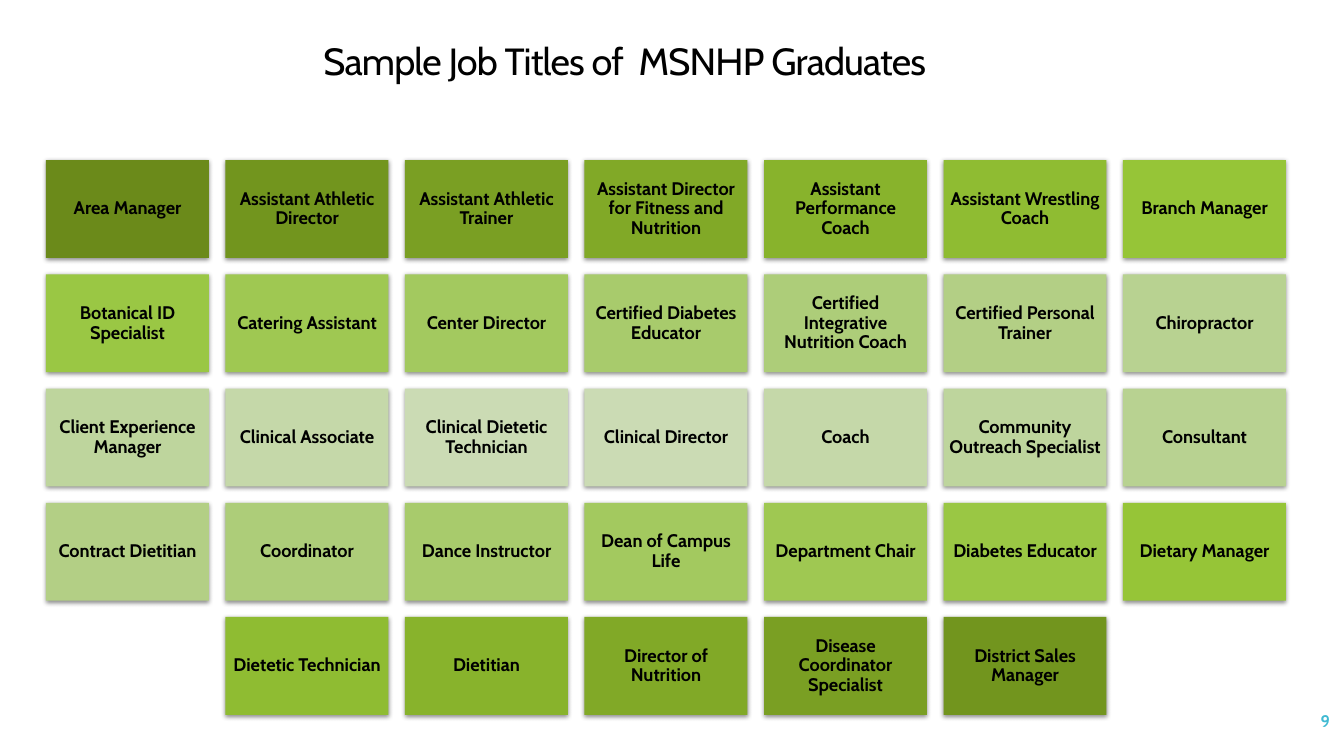
from lxml import etree
from pptx import Presentation
from pptx.dml.color import RGBColor
from pptx.enum.shapes import MSO_SHAPE
from pptx.enum.text import MSO_ANCHOR, PP_ALIGN
from pptx.oxml.ns import qn
from pptx.util import Pt

TITLE = "Sample Job Titles of  MSNHP Graduates"
PAGE_NUMBER = "9"
JOB_ROWS = [
    ["Area Manager", "Assistant Athletic Director", "Assistant Athletic Trainer",
     "Assistant Director for Fitness and Nutrition", "Assistant Performance Coach",
     "Assistant Wrestling Coach", "Branch Manager"],
    ["Botanical ID Specialist", "Catering Assistant", "Center Director",
     "Certified Diabetes Educator", "Certified Integrative Nutrition Coach",
     "Certified Personal Trainer", "Chiropractor"],
    ["Client Experience Manager", "Clinical Associate", "Clinical Dietetic Technician",
     "Clinical Director", "Coach", "Community Outreach Specialist", "Consultant"],
    ["Contract Dietitian", "Coordinator", "Dance Instructor", "Dean of Campus Life",
     "Department Chair", "Diabetes Educator", "Dietary Manager"],
    ["Dietetic Technician", "Dietitian", "Director of Nutrition",
     "Disease Coordinator Specialist", "District Sales Manager"],
]

# The cards run through these greens once, then back again.
GREENS = [RGBColor.from_string(code) for code in (
    "6B8A1A", "72951E", "7A9F23", "81A927", "88B32C", "8FBC32", "96C537", "9AC744", "9FC852",
    "A3C95F", "A8CB6C", "ADCD79", "B3CF85", "B8D291", "BED59D", "C5D8A9", "CBDBB4")]
BLACK = RGBColor(0x00, 0x00, 0x00)
TEAL = RGBColor(0x40, 0xBA, 0xD2)

FONT = "Cabin"
TITLE_FORMAT = {"size": Pt(27), "color": BLACK, "bold": False}
CARD_FORMAT = {"size": Pt(13), "color": BLACK, "bold": True}
NUMBER_FORMAT = {"size": Pt(12), "color": TEAL, "bold": True}
CENTER, RIGHT, MIDDLE = PP_ALIGN.CENTER, PP_ALIGN.RIGHT, MSO_ANCHOR.MIDDLE
RECTANGLE = MSO_SHAPE.RECTANGLE

PX = 914400 / 100.8
SLIDE_W, SLIDE_H = 1344, 756
TITLE_BOX = (0, 40, 1249, 47)
NUMBER_BOX = (1172, 701, 168, 40)
GRID_LEFT, GRID_TOP, GRID_W, GRID_H = 46, 160, 1240, 555
CARD_W, CARD_H, CARD_INSET = 163, 98, 5


def emu(*lengths):
    return [round(length * PX) for length in lengths]


def write(shape, text, formats, align, line_spacing):
    frame = shape.text_frame
    frame.word_wrap = True
    frame.vertical_anchor = MIDDLE
    paragraph = frame.paragraphs[0]
    paragraph.alignment = align
    paragraph.line_spacing = line_spacing
    run = paragraph.add_run()
    run.text = text
    run.font.name = FONT
    for name, value in formats.items():
        if name == "color":
            run.font.color.rgb = value
        else:
            setattr(run.font, name, value)
    return run


def add_soft_shadow(shape):
    shape.shadow.inherit = False
    effects = shape._element.spPr.find(qn("a:effectLst"))
    shadow = etree.SubElement(effects, qn("a:outerShdw"), blurRad=str(Pt(3.5)),
                              dist=str(Pt(1.1)), dir="5400000", rotWithShape="0")
    color = etree.SubElement(shadow, qn("a:srgbClr"), val="000000")
    etree.SubElement(color, qn("a:alpha"), val="45000")


def add_card(slide, job, left, top, green):
    card = slide.shapes.add_shape(RECTANGLE, *emu(left, top, CARD_W, CARD_H))
    card.fill.solid()
    card.fill.fore_color.rgb = green
    card.line.fill.background()
    add_soft_shadow(card)
    for side in ("left", "top", "right", "bottom"):
        setattr(card.text_frame, f"margin_{side}", emu(CARD_INSET)[0])
    write(card, job, CARD_FORMAT, CENTER, 0.9)


def main():
    deck = Presentation()
    deck.slide_width, deck.slide_height = emu(SLIDE_W, SLIDE_H)
    slide = deck.slides.add_slide(deck.slide_layouts[6])

    page_number = slide.shapes.add_textbox(*emu(*NUMBER_BOX))
    write(page_number, PAGE_NUMBER, NUMBER_FORMAT, RIGHT, 1.0)
    title = slide.shapes.add_textbox(*emu(*TITLE_BOX))
    title_run = write(title, TITLE, TITLE_FORMAT, CENTER, 0.9)
    title_run.font._element.set("spc", "-60")

    columns = len(JOB_ROWS[0])
    step_x = (GRID_W - CARD_W) / (columns - 1)
    step_y = (GRID_H - CARD_H) / (len(JOB_ROWS) - 1)
    last = sum(len(jobs) for jobs in JOB_ROWS)
    position = 0
    for row, jobs in enumerate(JOB_ROWS):
        row_left = GRID_LEFT + (columns - len(jobs)) / 2 * step_x
        for column, job in enumerate(jobs):
            green = GREENS[min(position, last - position)]
            add_card(slide, job, row_left + column * step_x, GRID_TOP + row * step_y, green)
            position += 1

    deck.save("out.pptx")


if __name__ == "__main__":
    main()
